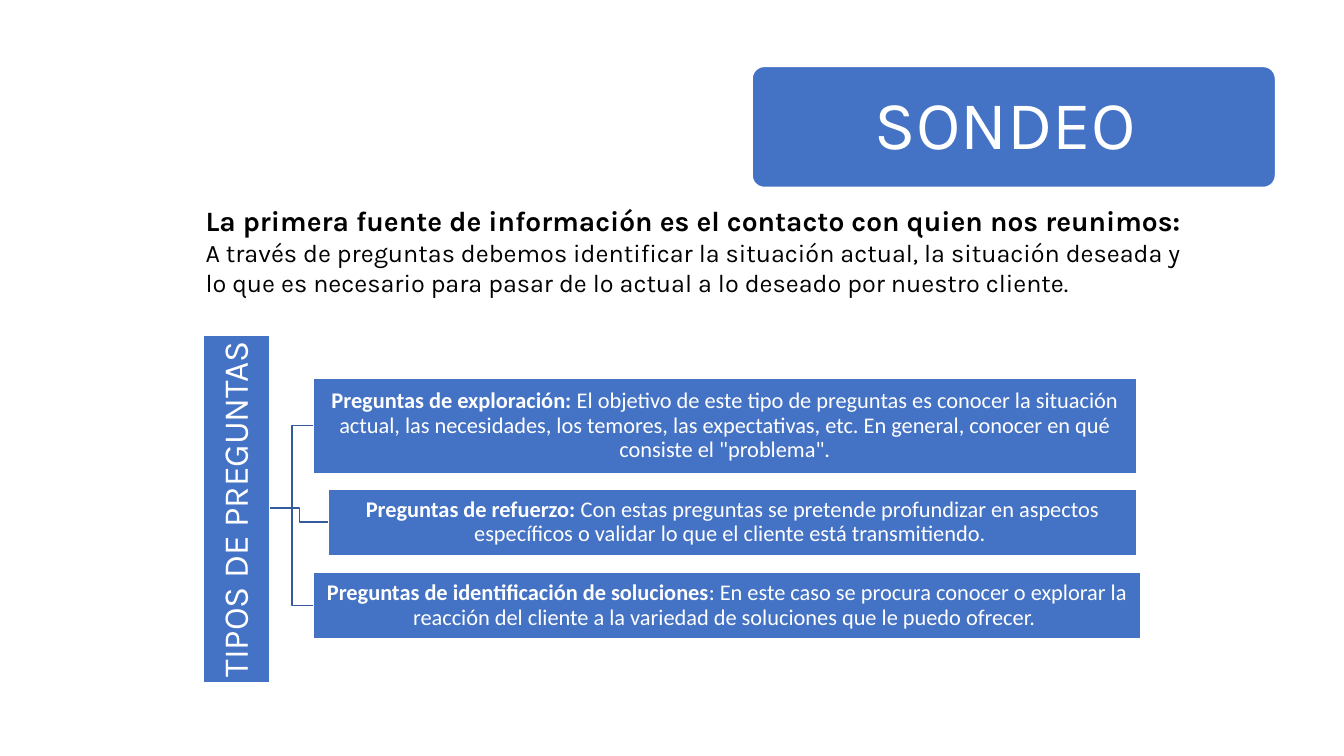
from pptx import Presentation
from pptx.dml.color import RGBColor
from pptx.enum.shapes import MSO_CONNECTOR, MSO_SHAPE
from pptx.enum.text import MSO_ANCHOR, MSO_AUTO_SIZE, PP_ALIGN
from pptx.oxml.ns import qn
from pptx.util import Inches, Pt
from lxml import etree

BLUE = RGBColor(0x44, 0x72, 0xC4)
DARK_BLUE = RGBColor(0x36, 0x5B, 0x9D)
WHITE = RGBColor(0xFF, 0xFF, 0xFF)
BLACK = RGBColor(0, 0, 0)
RECTANGLE = MSO_SHAPE.RECTANGLE
ROUNDED_RECTANGLE = MSO_SHAPE.ROUNDED_RECTANGLE
ELBOW = MSO_CONNECTOR.ELBOW
MIDDLE = MSO_ANCHOR.MIDDLE
CENTER = PP_ALIGN.CENTER
NO_AUTOFIT = MSO_AUTO_SIZE.NONE

TITLE_FONT = {"name": "Karla", "size": Pt(49), "bold": False}
BAR_FONT = {"name": "Karla", "size": Pt(25), "bold": False}
LEAD_FONT = {"name": "Karla", "size": Pt(20), "bold": True}
BODY_FONT = {"name": "Karla", "size": Pt(18), "bold": False}
LABEL_FONT = {"name": "Calibri", "size": Pt(16), "bold": True}
DETAIL_FONT = {"name": "Calibri", "size": Pt(16), "bold": False}

presentation = Presentation()
presentation.slide_width = Inches(13.33)
presentation.slide_height = Inches(7.5)
slide = presentation.slides.add_slide(presentation.slide_layouts[5])


def add_block(kind, left, top, width, height):
    shape = slide.shapes.add_shape(kind, Inches(left), Inches(top), Inches(width), Inches(height))
    shape.shadow.inherit = False
    shape.fill.solid()
    shape.fill.fore_color.rgb = BLUE
    shape.line.color.rgb = WHITE
    shape.line.width = Pt(1)
    return shape


def write_text(shape, runs, color, inset, centered=True):
    frame = shape.text_frame
    frame.word_wrap = True
    frame.auto_size = NO_AUTOFIT
    for side in ("left", "right", "top", "bottom"):
        setattr(frame, f"margin_{side}", Inches(inset[side in ("top", "bottom")]))
    paragraph = frame.paragraphs[0]
    if centered:
        frame.vertical_anchor = MIDDLE
        paragraph.alignment = CENTER
        paragraph.line_spacing = 0.9
    for text, font_format in runs:
        run = paragraph.add_run()
        run.text = text
        run.font.color.rgb = color
        for attribute, value in font_format.items():
            setattr(run.font, attribute, value)


banner = add_block(ROUNDED_RECTANGLE, 7.46, 0.66, 5.19, 1.2)
banner.adjustments[0] = 0.1
title = slide.shapes.title
title.element.addprevious(banner.element)
title.left, title.top = Inches(7.49), Inches(0.7)
title.width, title.height = Inches(5.12), Inches(1.13)
write_text(title, [("SONDEO ", TITLE_FONT)], WHITE, (0.2, 0.2))

introduction = slide.shapes.add_textbox(Inches(1.94), Inches(1.97), Inches(9.97), Inches(1.35))
write_text(introduction, [
    ("La primera fuente de información es el contacto con quien nos reunimos: ", LEAD_FONT),
    ("A través de preguntas debemos identificar la situación actual, la situación deseada y "
     "lo que es necesario para pasar de lo actual a lo deseado por nuestro cliente.", BODY_FONT),
], BLACK, (0.1, 0.05), centered=False)

questions = [
    (3.11, 3.75, 8.16, 0.95, "Preguntas de exploración: ",
     "El objetivo de este tipo de preguntas es conocer la situación actual, las necesidades, "
     "los temores, las expectativas, etc. En general, conocer en qué consiste el \"problema\"."),
    (3.26, 4.85, 8.01, 0.66, "Preguntas de refuerzo: ",
     "Con estas preguntas se pretende profundizar en aspectos específicos o validar lo que "
     "el cliente está transmitiendo. "),
    (3.11, 5.68, 8.2, 0.66, "Preguntas de identificación de soluciones",
     ": En este caso se procura conocer o explorar la reacción del cliente a la variedad de "
     "soluciones que le puedo ofrecer. "),
]

for left, top, width, height, label, detail in questions:
    connector = slide.shapes.add_connector(
        ELBOW, Inches(2.68), Inches(5.04), Inches(left), Inches(top + height / 2))
    connector.line.color.rgb = DARK_BLUE
    connector.line.width = Pt(1)
    etree.SubElement(connector.element.spPr, qn("a:effectLst"))

    question = add_block(RECTANGLE, left, top, width, height)
    write_text(question, [(label, LABEL_FONT), (detail, DETAIL_FONT)], WHITE, (0.01, 0.01))

types_bar = add_block(RECTANGLE, 0.62, 4.72, 3.45, 0.66)
types_bar.rotation = 270
write_text(types_bar, [("TIPOS DE PREGUNTAS ", BAR_FONT)], WHITE, (0.02, 0.02))

presentation.save("out.pptx")
